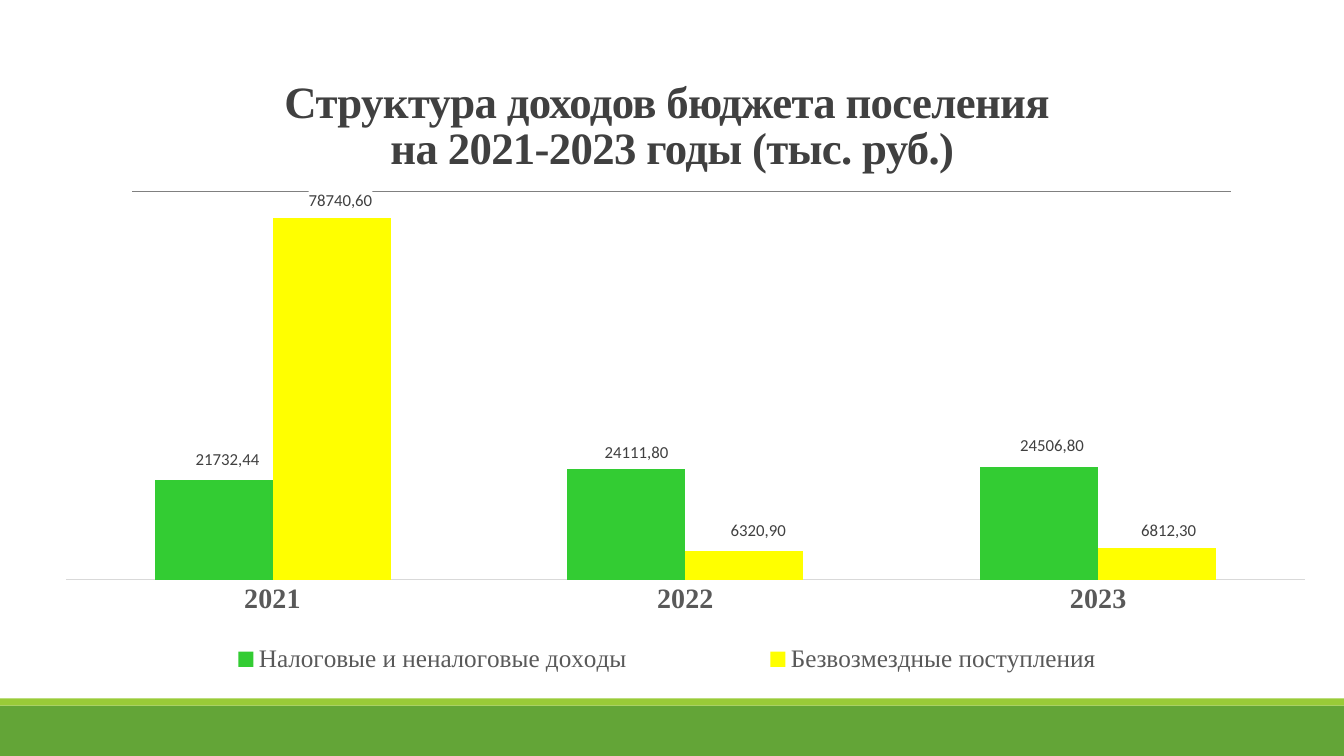
from lxml.etree import SubElement
from pptx import Presentation
from pptx.chart.data import CategoryChartData
from pptx.dml.color import RGBColor
from pptx.enum.chart import (XL_CHART_TYPE, XL_LABEL_POSITION,
                             XL_LEGEND_POSITION, XL_TICK_LABEL_POSITION,
                             XL_TICK_MARK)
from pptx.enum.shapes import MSO_CONNECTOR, MSO_SHAPE
from pptx.enum.text import MSO_ANCHOR, MSO_AUTO_SIZE, PP_ALIGN
from pptx.oxml import parse_xml
from pptx.oxml.ns import nsdecls, qn
from pptx.util import Cm, Pt

SERIF = "Times New Roman"
YEARS = ("2021", "2022", "2023")
# name, colour, values, label shifts in per cent of the chart size
SERIES = (
    ("Налоговые и неналоговые доходы", "33CC33", (21732.44, 24111.8, 24506.8),
     ((1.1, -1.1), (0.8, -0.4), (1, -1.4))),
    ("Безвозмездные поступления", "FFFF00", (78740.6, 6320.9, 6812.3),
     ((0.7, -0.6), (1.1, -1.1), (0.9, -0.6))),
)


def color(code):
    return RGBColor.from_string(code)


def style(font, size, code, name=SERIF, bold=False):
    font.size, font.name, font.bold = Pt(size), name, bold
    font.color.rgb = color(code)


def add_band(slide, top, height, code):
    band = slide.shapes.add_shape(
        MSO_SHAPE.RECTANGLE, 0, Cm(top), Cm(33.87), Cm(height))
    band.shadow.inherit = False
    band.fill.solid()
    band.fill.fore_color.rgb = color(code)
    band.line.fill.background()


def add_rule(slide, left, right, top):
    rule = slide.shapes.add_connector(
        MSO_CONNECTOR.STRAIGHT, Cm(left), Cm(top), Cm(right), Cm(top))
    rule.line.color.rgb = color("808080")
    rule.line.width = Pt(0.5)
    SubElement(rule._element.spPr, qn("a:effectLst"))


def set_title(slide, text):
    title = slide.shapes.title
    title.left, title.top = Cm(2.54), Cm(1.75)
    title.width, title.height = Cm(28.8), Cm(2.75)
    frame = title.text_frame
    frame.text = text
    frame.word_wrap = True
    frame.auto_size = MSO_AUTO_SIZE.NONE
    frame.vertical_anchor = MSO_ANCHOR.BOTTOM
    par = frame.paragraphs[0]
    par.alignment = PP_ALIGN.CENTER
    par.line_spacing = 0.85
    style(par.font, 32, "404040", bold=True)
    par._p.pPr.find(qn("a:defRPr")).set("spc", "-50")


def layout(inner="", **sides):
    """Return a manual chart layout; sides are per cent of the chart size."""
    target = f'<c:layoutTarget val="{inner}"/>' if inner else ""
    modes = "".join(f'<c:{side}Mode val="edge"/>' for side in "xy"
                    if "w" in sides)
    parts = "".join(f'<c:{side} val="{share / 100:.3f}"/>'
                    for side, share in sides.items())
    return parse_xml(f'<c:layout {nsdecls("c")}><c:manualLayout>{target}'
                     f'{modes}{parts}</c:manualLayout></c:layout>')


def put_layout(parent, before, new):
    """Replace any layout of parent, placing the new one after a child."""
    for old in parent.findall(qn("c:layout")):
        parent.remove(old)
    if before:
        parent.find(qn(before)).addnext(new)
    else:
        parent.insert(0, new)


def show_values(series):
    labels = series.data_labels
    labels.show_value = True
    labels.number_format = "0.00"
    labels.number_format_is_linked = False
    labels.position = XL_LABEL_POSITION.OUTSIDE_END
    style(labels.font, 12, "404040", "Calibri", bold=True)
    for lines in labels._element.findall(qn("c:showLeaderLines")):
        lines.set("val", "0")


def add_label(point, value, shift):
    label = point.data_label
    frame = label.text_frame
    frame.text = f"{value:.2f}".replace(".", ",")
    style(frame.paragraphs[0].runs[0].font, 12, "404040", "Calibri")
    label.position = XL_LABEL_POSITION.OUTSIDE_END
    node = label._dLbl
    put_layout(node, "c:idx", layout(x=shift[0], y=shift[1]))
    if value == max(SERIES[1][2]):
        node.find(qn("c:tx")).addnext(parse_xml(
            f'<c:spPr {nsdecls("c", "a")}><a:solidFill>'
            '<a:srgbClr val="FFFFFF"/></a:solidFill></c:spPr>'))


def set_axes(chart):
    years, sums = chart.category_axis, chart.value_axis
    years.major_tick_mark = years.minor_tick_mark = XL_TICK_MARK.NONE
    years.tick_label_position = XL_TICK_LABEL_POSITION.NEXT_TO_AXIS
    years.format.line.color.rgb = color("D9D9D9")
    years.format.line.width = Pt(0.75)
    style(years.tick_labels.font, 20, "595959", bold=True)
    sums.minimum_scale, sums.maximum_scale = 0, 90000
    sums.has_major_gridlines = False
    sums.visible = False


def set_legend(chart):
    chart.has_legend = True
    legend = chart.legend
    legend.position = XL_LEGEND_POSITION.BOTTOM
    legend.include_in_layout = False
    style(legend.font, 18, "595959")
    put_layout(legend._element, "c:legendPos",
               layout(x=4.2, y=90, w=88.6, h=10))


def add_bars(slide):
    data = CategoryChartData(number_format="0.00")
    data.categories = YEARS
    for name, _, values, _ in SERIES:
        data.add_series(name, values)
    chart = slide.shapes.add_chart(
        XL_CHART_TYPE.COLUMN_CLUSTERED, Cm(1.25), Cm(3.75),
        Cm(32.08), Cm(13.54), data).chart
    chart.has_title = False
    style(chart.font, 10, "000000", "Calibri")
    set_axes(chart)
    set_legend(chart)
    plot = chart.plots[0]
    plot.gap_width, plot.overlap = 150, 0
    plot.vary_by_categories = False
    put_layout(chart._chartSpace.chart.plotArea, None,
               layout("inner", x=1.3, y=3.2, w=97.3, h=77))
    for series, (_, code, values, shifts) in zip(plot.series, SERIES):
        series.format.fill.solid()
        series.format.fill.fore_color.rgb = color(code)
        show_values(series)
        for spot, (value, shift) in enumerate(zip(values, shifts)):
            add_label(series.points[spot], value, shift)


def main():
    deck = Presentation()
    deck.slide_width, deck.slide_height = Cm(33.87), Cm(19.05)
    slide = deck.slides.add_slide(deck.slide_layouts[5])
    add_band(slide, 17.78, 1.27, "63A537")
    add_band(slide, 17.6, 0.18, "99CB38")
    add_rule(slide, 3.33, 31.01, 4.83)
    set_title(slide, "Структура доходов бюджета поселения \v"
                     "на 2021-2023 годы (тыс. руб.)")
    add_bars(slide)
    deck.save("out.pptx")


if __name__ == "__main__":
    main()
